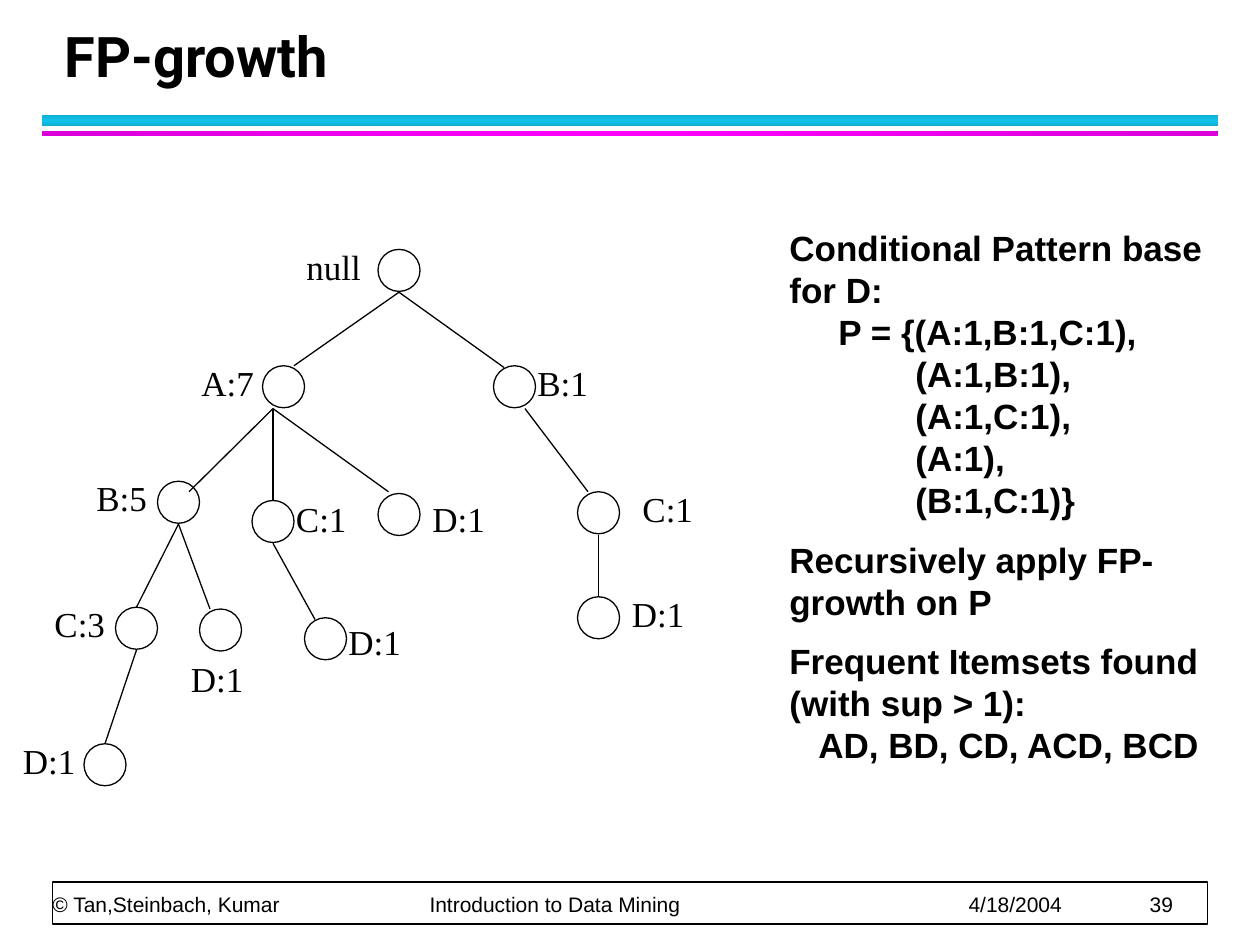
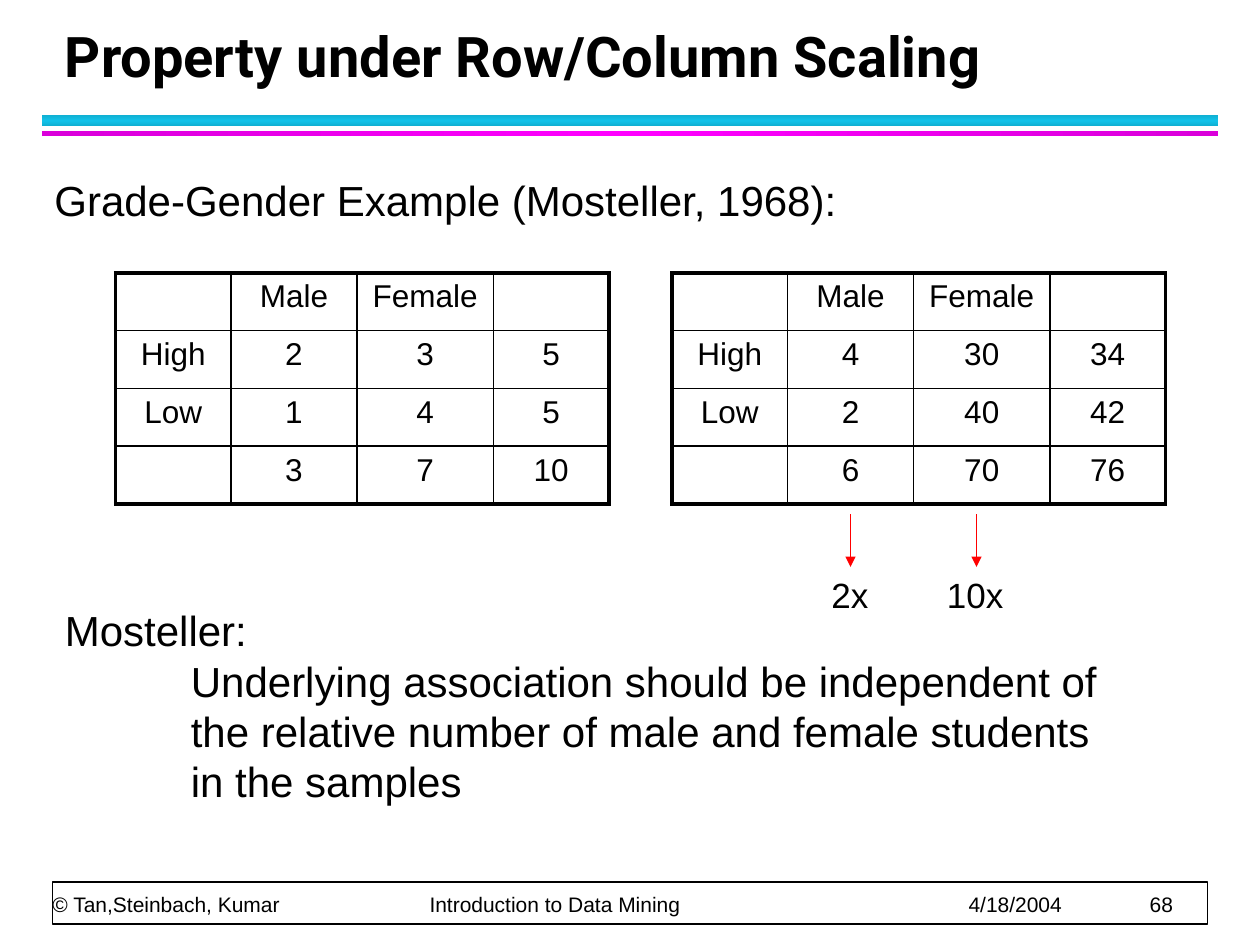
from copy import deepcopy
from dataclasses import dataclass

from lxml import etree
from pptx import Presentation
from pptx.dml.color import RGBColor
from pptx.enum.shapes import MSO_CONNECTOR, MSO_SHAPE
from pptx.enum.text import MSO_ANCHOR, PP_ALIGN
from pptx.oxml.ns import qn
from pptx.util import Pt

RECT, OVAL = MSO_SHAPE.RECTANGLE, MSO_SHAPE.OVAL
STRAIGHT = MSO_CONNECTOR.STRAIGHT
TOP, BOTTOM = MSO_ANCHOR.TOP, MSO_ANCHOR.BOTTOM
CENTER = PP_ALIGN.CENTER


@dataclass(frozen=True)
class Theme:
    ink: str = "000000"
    paper: str = "FFFFFF"
    arrow: str = "FF0000"
    cyan_band: tuple = ("10B0D3", "12C2E9", "10B0D3")
    magenta_band: tuple = ("DA00DA", "FF00FF", "DA00DA")
    title_font: str = "Roboto"
    body_font: str = "Arial"
    tree_font: str = "Times New Roman"
    title_size: int = 32
    body_size: int = 24
    note_size: int = 20
    table_size: int = 18
    footer_size: int = 12
    tree_line: float = 0.75
    thin_line: float = 1
    thick_line: float = 2.25


THEME = Theme()

# Shared by both slides
FOOTER_PARTS = ["© Tan,Steinbach, Kumar", "Introduction to Data Mining", "4/18/2004"]
FOOTER_TABS = [215.5, 523.5, 627]

# FP-growth. Each node: key, parent, left, top, label, label offset,
# point of the node where the edge from the parent arrives
NODE_SIZE = 24
LABEL_SIZE = (48, 31)
TREE = [
    ("root", None, 216, 142.5, "null", (-48, -6), None),
    ("a", "root", 150, 209, "A:7", (-42, -6), (18, 0)),
    ("b", "root", 282, 209, "B:1", (18, -6), (6, 1)),
    ("ab", "a", 90, 275, "B:5", (-42, -6), (18, 6)),
    ("ac", "a", 144, 286, "C:1", (18, -5), (12, 0)),
    ("ad", "a", 216, 282, "D:1", (24, -1), (6, -1)),
    ("bc", "b", 330, 281, "C:1", (30, -6), (6, 0)),
    ("bcd", "bc", 330, 341, "D:1", (24, -6), (12, 0)),
    ("abc", "ab", 66, 347, "C:3", (-42, -6), (12, 0)),
    ("abd", "ab", 114, 348, "D:1", (-12, 24), (6, 0)),
    ("acd", "ac", 174, 353, "D:1", (18, -2), (6, 1)),
    ("abcd", "abc", 48, 425, "D:1", (-42, -6), (12, 0)),
]
EDGE_START_X = {"a": 6, "b": 18}  # other edges start at the middle of the node

# Paragraphs: text, left indent, space before
PATTERN_NOTES = [
    ("Conditional Pattern base for D:", 0, 0),
    ("P = {(A:1,B:1,C:1),", 28, 0),
    ("(A:1,B:1),", 72, 0),
    ("(A:1,C:1),", 72, 0),
    ("(A:1),", 72, 0),
    ("(B:1,C:1)}", 72, 0),
    ("Recursively apply FP-growth on P", 0, 10),
    ("Frequent Itemsets found (with sup > 1):", 0, 10),
    ("AD, BD, CD, ACD, BCD", 16.5, 0),
]

# Property under Row/Column Scaling
EXAMPLE = [("Grade-Gender Example (Mosteller, 1968):", 0, 0)]
CONCLUSION = [
    ("Mosteller:", 0, 0),
    ("Underlying association should be independent of", 72, 0),
    ("the relative number of male and female students", 72, 0),
    ("in the samples", 72, 0),
]
HEADER = ["", "Male", "Female", ""]
GRADES = [HEADER, ["High", 2, 3, 5], ["Low", 1, 4, 5], ["", 3, 7, 10]]
SCALED_GRADES = [HEADER, ["High", 4, 30, 34], ["Low", 2, 40, 42], ["", 6, 70, 76]]
GRADE_TABLES = [(66, GRADES), (384, SCALED_GRADES)]
COLUMN_WIDTHS = [66, 72, 78, 66]
ROW_HEIGHT = 33
FACTORS = [("2x", 486, 468), ("10x", 558, 534)]  # text, arrow x, label left


def rgb(colour):
    return RGBColor.from_string(colour)


def style(paragraph, size, font=THEME.body_font, bold=False):
    for run in paragraph.runs:
        run.font.size = Pt(size)
        run.font.name = font
        run.font.bold = bold
        run.font.color.rgb = rgb(THEME.ink)


def add_text(slide, box, paragraphs, size, font=THEME.body_font, bold=False,
             anchor=TOP):
    frame = slide.shapes.add_textbox(*map(Pt, box)).text_frame
    frame.word_wrap = True
    frame.vertical_anchor = anchor
    for index, (text, indent, before) in enumerate(paragraphs):
        paragraph = frame.add_paragraph() if index else frame.paragraphs[0]
        paragraph.text = text
        paragraph.space_before = Pt(before)
        if indent:
            properties = paragraph._p.get_or_add_pPr()
            properties.set("marL", str(Pt(indent)))
            properties.set("indent", "0")
        style(paragraph, size, font, bold)
    return frame


def add_outline(slide, kind, box, width):
    shape = slide.shapes.add_shape(kind, *map(Pt, box))
    shape.shadow.inherit = False
    shape.fill.background()
    shape.line.color.rgb = rgb(THEME.ink)
    shape.line.width = Pt(width)
    return shape


def add_line(slide, start, end, colour, width, arrow=False):
    connector = slide.shapes.add_connector(STRAIGHT, *map(Pt, start + end))
    connector.line.color.rgb = rgb(colour)
    connector.line.width = Pt(width)
    if arrow:
        etree.SubElement(connector.line._get_or_add_ln(), qn("a:tailEnd"),
                         type="triangle")
    etree.SubElement(connector._element.spPr, qn("a:effectLst"))


def add_band(slide, top, height, colours, angle):
    band = slide.shapes.add_shape(RECT, Pt(24), Pt(top), Pt(672), Pt(height))
    band.shadow.inherit = False
    band.line.fill.background()
    band.fill.gradient()
    band.fill.gradient_angle = angle
    stop_list = band._element.spPr.find(".//" + qn("a:gsLst"))
    stop_list.append(deepcopy(stop_list[0]))
    for index, (stop, colour) in enumerate(zip(band.fill.gradient_stops, colours)):
        stop.position = index / 2
        stop.color.rgb = rgb(colour)


def add_footer(slide, number):
    frame_box = add_outline(slide, RECT, (30, 504, 660, 24), THEME.thin_line)
    frame_box.fill.solid()
    frame_box.fill.fore_color.rgb = rgb(THEME.paper)
    text = "\t".join(FOOTER_PARTS + [str(number)])
    footer = add_text(slide, (30, 504, 659, 20), [(text, 0, 0)],
                      THEME.footer_size, anchor=BOTTOM)
    footer.margin_left = footer.margin_right = 0
    footer.margin_top = footer.margin_bottom = 0
    paragraph = footer.paragraphs[0]
    paragraph.line_spacing = Pt(20)
    tabs = etree.SubElement(paragraph._p.get_or_add_pPr(), qn("a:tabLst"))
    for position in FOOTER_TABS:
        etree.SubElement(tabs, qn("a:tab"), pos=str(Pt(position)), algn="l")


def add_slide(deck, title, number):
    slide = deck.slides.add_slide(deck.slide_layouts[6])
    add_band(slide, 66, 6, THEME.cyan_band, 90)
    add_band(slide, 75, 3, THEME.magenta_band, 0)
    add_footer(slide, number)
    heading = add_text(slide, (30, 12, 652, 42), [(title, 0, 0)],
                       THEME.title_size, THEME.title_font, True, BOTTOM)
    heading.paragraphs[0].line_spacing = Pt(36)
    return slide


def add_tree(slide):
    corners = {key: (left, top) for key, _, left, top, *_ in TREE}
    for key, parent, left, top, label, (label_x, label_y), arrival in TREE:
        add_outline(slide, OVAL, (left, top, NODE_SIZE, NODE_SIZE), THEME.tree_line)
        add_text(slide, (left + label_x, top + label_y, *LABEL_SIZE),
                 [(label, 0, 0)], THEME.note_size, THEME.tree_font)
        if parent:
            parent_left, parent_top = corners[parent]
            start_x = parent_left + EDGE_START_X.get(parent, NODE_SIZE / 2)
            add_line(slide, (start_x, parent_top + NODE_SIZE + 0.5),
                     (left + arrival[0], top + arrival[1]),
                     THEME.ink, THEME.tree_line)


def set_borders(cell, widths):
    properties = cell._tc.get_or_add_tcPr()
    for position, (side, width) in enumerate(widths.items()):
        border = etree.Element(qn("a:ln" + side), w=str(Pt(width)))
        fill = etree.SubElement(border, qn("a:solidFill"))
        etree.SubElement(fill, qn("a:srgbClr"), val=THEME.ink)
        properties.insert(position, border)


def add_grade_table(slide, left, rows):
    last_row, last_column = len(rows) - 1, len(COLUMN_WIDTHS) - 1
    table = slide.shapes.add_table(
        len(rows), len(COLUMN_WIDTHS), Pt(left), Pt(156),
        Pt(sum(COLUMN_WIDTHS)), Pt(ROW_HEIGHT * len(rows))).table
    table.first_row = table.horz_banding = False
    for column, width in zip(table.columns, COLUMN_WIDTHS):
        column.width = Pt(width)
    for r, values in enumerate(rows):
        table.rows[r].height = Pt(ROW_HEIGHT)
        for c, value in enumerate(values):
            cell = table.cell(r, c)
            cell.fill.background()
            cell.text_frame.text = str(value)
            paragraph = cell.text_frame.paragraphs[0]
            paragraph.alignment = CENTER
            paragraph.space_after = Pt(4)
            style(paragraph, THEME.table_size)
            outer = {"L": c == 0, "R": c == last_column,
                     "T": r == 0, "B": r == last_row}
            set_borders(cell, {side: THEME.thick_line if edge else THEME.thin_line
                               for side, edge in outer.items()})


def main():
    deck = Presentation()
    deck.slide_width, deck.slide_height = Pt(720), Pt(540)

    growth = add_slide(deck, "FP-growth", 39)
    add_tree(growth)
    add_text(growth, (444, 126, 264, 319), PATTERN_NOTES, THEME.note_size, bold=True)

    scaling = add_slide(deck, "Property under Row/Column Scaling", 68)
    for left, rows in GRADE_TABLES:
        add_grade_table(scaling, left, rows)
    add_text(scaling, (24, 96, 606, 36), EXAMPLE, THEME.body_size)
    add_text(scaling, (30, 342, 606, 122), CONCLUSION, THEME.body_size)
    for factor, arrow_x, label_left in FACTORS:
        add_line(scaling, (arrow_x, 294), (arrow_x, 324), THEME.arrow,
                 THEME.thin_line, arrow=True)
        add_text(scaling, (label_left, 324, *LABEL_SIZE), [(factor, 0, 0)],
                 THEME.note_size)

    deck.save("out.pptx")


if __name__ == "__main__":
    main()
